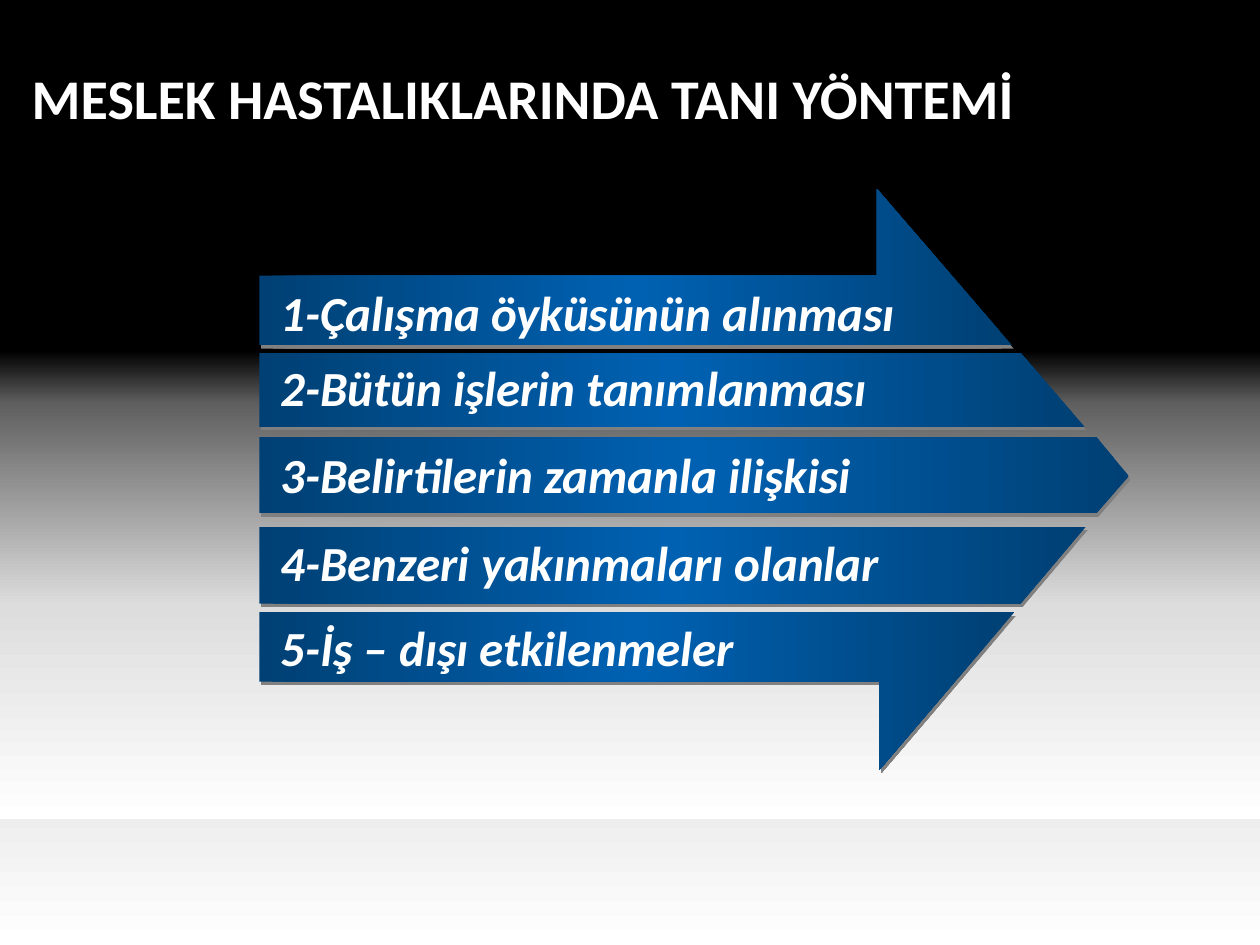
from lxml.etree import SubElement
from pptx import Presentation
from pptx.dml.color import RGBColor
from pptx.enum.shapes import MSO_SHAPE
from pptx.enum.text import MSO_ANCHOR, MSO_AUTO_SIZE, PP_ALIGN
from pptx.oxml.ns import qn
from pptx.util import Cm, Pt

COLORS = {
    "black": "000000", "gray": "5F5F5F", "silver": "DDDDDD", "white": "FFFFFF",
    "navy": "004074", "blue": "0061B2", "shadow": "808080",
}
FONT = "Calibri"
SLIDE_WIDTH, SLIDE_HEIGHT = 25.4, 19.05
BAND_LEFT, TEXT_LEFT = 5.23, 5.66
DOWNWARD, RIGHTWARD = 270, 0

# top, height, colours from top to bottom
BACKDROP_STRIPS = [
    (0, 8.43, ["black", "black"]),
    (9.37, 4.72, ["gray", "silver"]),
    (8.15, 1.24, ["black", "gray"]),
    (14.05, 5.0, ["silver", "white"]),
]

# text, text top, band top, band bottom, right-hand outline from top to bottom
STEPS = [
    ("1-Çalışma öyküsünün alınması", 5.69, 5.56, 6.96,
     [(17.68, 5.56), (17.68, 3.81), (20.4, 6.96)]),
    ("2-Bütün işlerin tanımlanması", 7.21, 7.11, 8.61,
     [(20.57, 7.11), (21.87, 8.61)]),
    ("3-Belirtilerin zamanla ilişkisi", 8.97, 8.81, 10.35,
     [(22.1, 8.81), (22.76, 9.6), (22.1, 10.35)]),
    ("4-Benzeri yakınmaları olanlar", 10.74, 10.62, 12.17,
     [(21.89, 10.62), (20.57, 12.17)]),
    ("5-İş – dışı etkilenmeler", 12.45, 12.34, 13.74,
     [(20.45, 12.34), (17.73, 15.52), (17.73, 13.74)]),
]


def fill_gradient(shape, names, angle):
    """Fill with evenly spaced colours and remove the outline."""
    shape.fill.gradient()
    shape.fill.gradient_angle = angle
    stops = shape._element.spPr.find(".//" + qn("a:gsLst"))
    stops.clear()
    for index, name in enumerate(names):
        position = 100000 * index // (len(names) - 1)
        stop = SubElement(stops, qn("a:gs"), pos=str(position))
        SubElement(stop, qn("a:srgbClr"), val=COLORS[name])
    shape.line.fill.background()


def add_hard_shadow(shape):
    shape.shadow.inherit = False
    effects = shape._element.spPr.find(qn("a:effectLst"))
    shadow = SubElement(effects, qn("a:outerShdw"), blurRad="0",
                        dist=str(Pt(2.2)), dir=str(63 * 60000),
                        algn="ctr", rotWithShape="0")
    SubElement(shadow, qn("a:srgbClr"), val=COLORS["shadow"])


def add_backdrop(page, scale):
    group = page.shapes.add_group_shape()
    for top, height, names in BACKDROP_STRIPS:
        strip = group.shapes.add_shape(
            MSO_SHAPE.RECTANGLE, 0, Cm(top * scale),
            Cm(SLIDE_WIDTH), Cm(height * scale))
        strip.shadow.inherit = False
        fill_gradient(strip, names, DOWNWARD)


def add_band(page, top, bottom, outline):
    builder = page.shapes.build_freeform(Cm(BAND_LEFT), Cm(top))
    corners = outline + [(BAND_LEFT, bottom)]
    builder.add_line_segments([(Cm(x), Cm(y)) for x, y in corners], close=True)
    band = builder.convert_to_shape()
    fill_gradient(band, ["navy", "blue", "navy"], RIGHTWARD)
    add_hard_shadow(band)


def format_text(para, size, italic=False):
    para.alignment = PP_ALIGN.LEFT
    for span in para.runs:
        span.font.name = FONT
        span.font.size = Pt(size)
        span.font.bold = True
        span.font.italic = italic
        span.font.color.rgb = RGBColor.from_string(COLORS["white"])


def add_label(page, text, top):
    box = page.shapes.add_textbox(Cm(TEXT_LEFT), Cm(top), Cm(14.73), Cm(1.19))
    frame = box.text_frame
    frame.margin_left = frame.margin_right = 0
    frame.margin_top = frame.margin_bottom = 0
    frame.word_wrap = True
    frame.auto_size = MSO_AUTO_SIZE.SHAPE_TO_FIT_TEXT
    frame.text = text
    format_text(frame.paragraphs[0], 28, italic=True)


def set_title(page, text):
    title = page.shapes.title
    title.left, title.top = Cm(0.64), Cm(1.14)
    title.width, title.height = Cm(24.49), Cm(1.8)
    frame = title.text_frame
    frame.margin_left = frame.margin_right = 0
    frame.vertical_anchor = MSO_ANCHOR.MIDDLE
    frame.auto_size = MSO_AUTO_SIZE.NONE
    frame.text = text
    para = frame.paragraphs[0]
    para.line_spacing = 0.9
    format_text(para, 32)
    page.shapes._spTree.append(title._element)  # in front of the backdrop


def main():
    deck = Presentation()
    deck.slide_width, deck.slide_height = Cm(SLIDE_WIDTH), Cm(SLIDE_HEIGHT)
    page = deck.slides.add_slide(deck.slide_layouts[5])
    for scale in (1, 0.867):
        add_backdrop(page, scale)
    for _, _, top, bottom, outline in STEPS:
        add_band(page, top, bottom, outline)
    for text, text_top, *_ in STEPS:
        add_label(page, text, text_top)
    set_title(page, "MESLEK HASTALIKLARINDA TANI YÖNTEMİ")
    deck.save("out.pptx")


if __name__ == "__main__":
    main()
